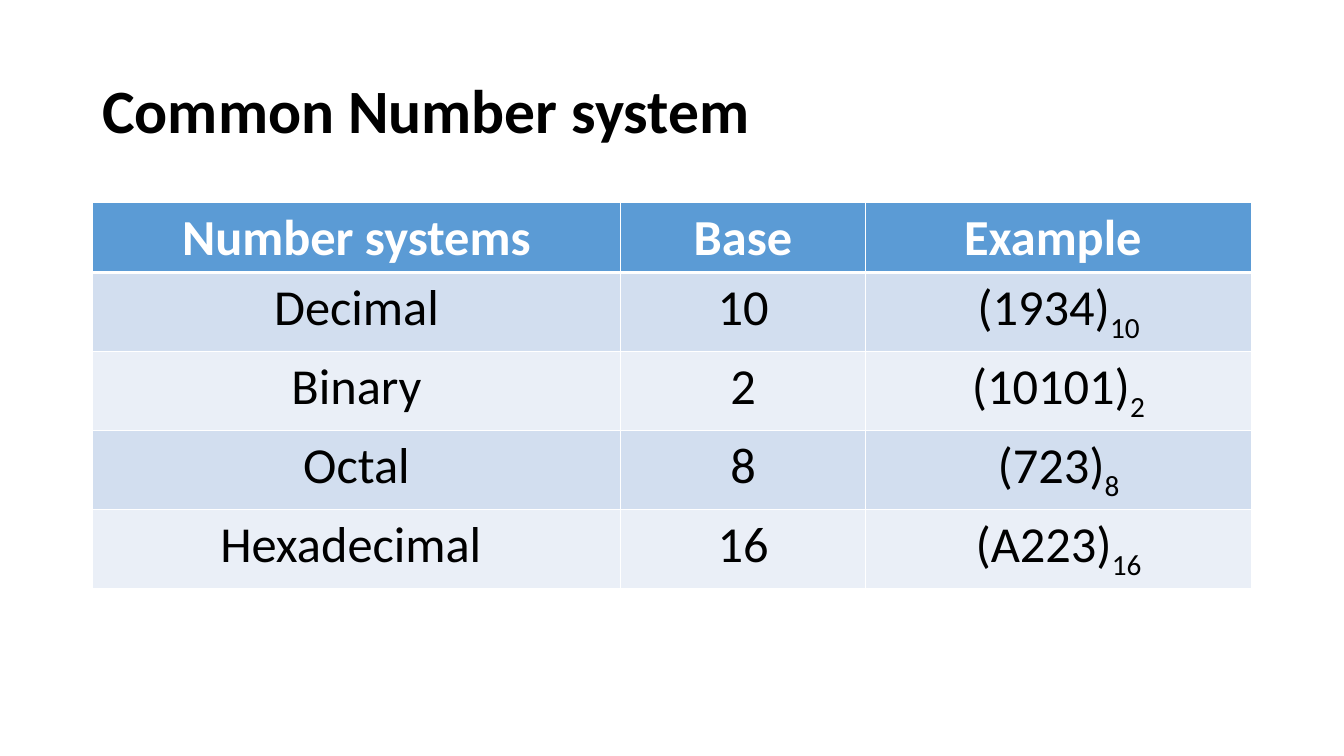
from pptx import Presentation
from pptx.dml.color import RGBColor
from pptx.enum.text import MSO_ANCHOR, PP_ALIGN
from pptx.oxml import parse_xml
from pptx.oxml.ns import nsdecls
from pptx.util import Cm, Pt

FONT = "Calibri"
WHITE, BLACK = "FFFFFF", "000000"
HEADER_FILL = "5B9BD5"
BAND_FILLS = ("D2DEEF", "EAEFF7")

HEADINGS = ("Number systems", "Base", "Example ")
# Name, base, digits of the example
NUMBER_SYSTEMS = (
    ("Decimal", "10", "1934"),
    ("Binary", "2", "10101"),
    ("Octal", "8", "723"),
    ("Hexadecimal ", "16", "A223"),
)
COLUMN_WIDTHS = (13.31, 6.17, 9.73)
HEADER_HEIGHT, ROW_HEIGHT = 1.78, 1.98


def color(hex_string):
    return RGBColor.from_string(hex_string)


def format_run(run, size, hex_string, bold=False):
    run.font.name = FONT
    run.font.size = Pt(size)
    run.font.bold = bold
    run.font.color.rgb = color(hex_string)


def add_title(slide, left, top, width, height):
    title = slide.shapes.add_textbox(Cm(left), Cm(top), Cm(width), Cm(height))
    frame = title.text_frame
    frame.word_wrap = True
    frame.vertical_anchor = MSO_ANCHOR.MIDDLE
    frame.text = "Common Number system"
    frame.paragraphs[0].line_spacing = 0.9
    format_run(frame.paragraphs[0].runs[0], 44, BLACK, bold=True)


def set_borders(cell, top, bottom):
    """Draw white cell borders; widths are in points."""
    properties = cell._tc.get_or_add_tcPr()
    for side, points in (("L", 1), ("R", 1), ("T", top), ("B", bottom)):
        properties.append(parse_xml(
            f'<a:ln{side} {nsdecls("a")} w="{Pt(points)}"><a:solidFill>'
            f'<a:srgbClr val="{WHITE}"/></a:solidFill></a:ln{side}>'))


def fill_cell(cell, text, fill, text_color, bold=False, subscript=None):
    paragraph = cell.text_frame.paragraphs[0]
    paragraph.text = text
    paragraph.alignment = PP_ALIGN.CENTER
    if subscript:
        paragraph.add_run().text = subscript
    for run in paragraph.runs:
        format_run(run, 36, text_color, bold)
    if subscript:
        paragraph.runs[-1].font._element.set("baseline", "-25000")
    cell.fill.solid()
    cell.fill.fore_color.rgb = color(fill)


def add_systems_table(slide, left, top):
    height = HEADER_HEIGHT + ROW_HEIGHT * len(NUMBER_SYSTEMS)
    systems = slide.shapes.add_table(
        len(NUMBER_SYSTEMS) + 1, len(HEADINGS),
        Cm(left), Cm(top), Cm(sum(COLUMN_WIDTHS)), Cm(height)).table
    for column, width in zip(systems.columns, COLUMN_WIDTHS):
        column.width = Cm(width)

    # Borders and row heights, with a thick rule under the header
    for index, row in enumerate(systems.rows):
        row.height = Cm(ROW_HEIGHT if index else HEADER_HEIGHT)
        for cell in row.cells:
            set_borders(cell, top=3 if index == 1 else 1,
                        bottom=1 if index else 3)

    # Header
    for column, heading in enumerate(HEADINGS):
        fill_cell(systems.cell(0, column), heading, HEADER_FILL, WHITE, bold=True)

    # Banded body
    for index, (name, base, digits) in enumerate(NUMBER_SYSTEMS):
        band = BAND_FILLS[index % 2]
        name_cell, base_cell, example_cell = systems.rows[index + 1].cells
        fill_cell(name_cell, name, band, BLACK)
        fill_cell(base_cell, base, band, BLACK)
        fill_cell(example_cell, f"({digits})", band, BLACK, subscript=base)


def main():
    presentation = Presentation()
    presentation.slide_width = Cm(33.87)
    presentation.slide_height = Cm(19.05)
    slide = presentation.slides.add_slide(presentation.slide_layouts[6])
    add_title(slide, 2.33, 1.01, 29.21, 3.68)
    add_systems_table(slide, 2.33, 5.09)
    presentation.save("out.pptx")


if __name__ == "__main__":
    main()
